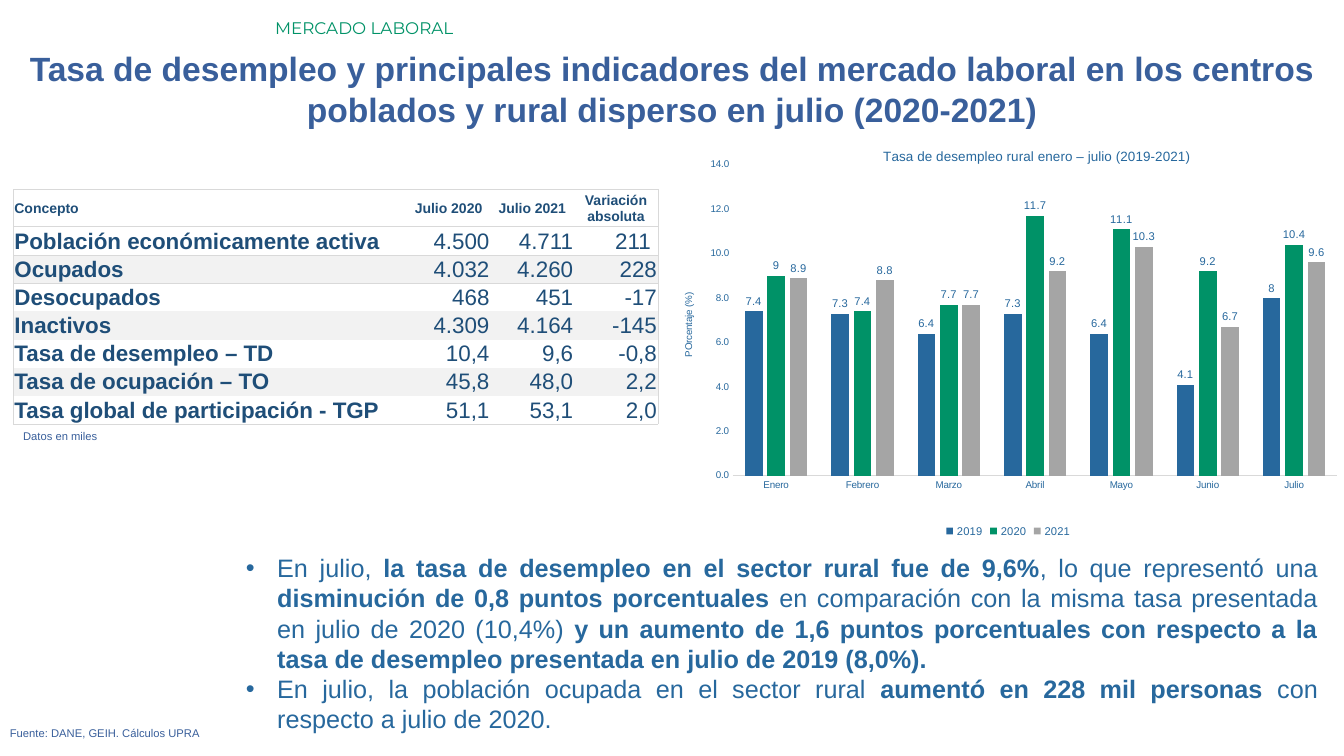
from lxml.etree import SubElement
from pptx import Presentation
from pptx.chart.data import CategoryChartData
from pptx.dml.color import RGBColor
from pptx.enum.chart import XL_CHART_TYPE as ChartType, XL_LABEL_POSITION as LabelPosition
from pptx.enum.chart import XL_LEGEND_POSITION as LegendPosition, XL_TICK_MARK as TickMark
from pptx.enum.text import MSO_ANCHOR as Anchor, MSO_AUTO_SIZE as AutoSize, PP_ALIGN as Align
from pptx.oxml import parse_xml
from pptx.oxml.ns import nsdecls, qn
from pptx.util import Inches, Pt

COLORS = {
    "blue": "27689D", "green": "009267", "gray": "A5A5A5", "heading": "395F9B",
    "navy": "1F4E78", "border": "D9D9D9", "band": "F2F2F2", "white": "FFFFFF",
}

deck = Presentation()
deck.slide_width, deck.slide_height = Inches(13.33), Inches(7.5)
COL, ROW = deck.slide_width / 100, deck.slide_height / 100
page = deck.slides.add_slide(deck.slide_layouts[1])


def area(left, top, width, height):
    return [round(n) for n in (left * COL, top * ROW, width * COL, height * ROW)]


def style(font, size, color, bold=None, name="Arial"):
    font.name, font.size, font.bold = name, Pt(size), bold
    font.color.rgb = RGBColor.from_string(COLORS[color])


title, body = page.shapes.title, page.placeholders[1]
for box, place in ((title, (0, 5.73, 100, 12.13)), (body, (17.55, 72.4, 81.25, 25.6))):
    box.left, box.top, box.width, box.height = area(*place)
    box.text_frame.auto_size = AutoSize.NONE
    box.text_frame.vertical_anchor = Anchor.TOP

title.text_frame.text = (
    "Tasa de desempleo y principales indicadores del mercado laboral "
    "en los centros poblados y rural disperso en julio (2020-2021)"
)
heading = title.text_frame.paragraphs[0]
heading.alignment = Align.CENTER
style(heading.font, 24, "heading", True)

findings = [
    [("En julio, ", False),
     ("la tasa de desempleo en el sector rural fue de 9,6%", True),
     (", lo que representó una ", False),
     ("disminución de 0,8 puntos porcentuales", True),
     (" en comparación con la misma tasa presentada en julio de 2020 (10,4%) ", False),
     ("y un aumento de 1,6 puntos porcentuales con respecto a la tasa de desempleo "
      "presentada en julio de 2019 (8,0%).", True)],
    [("En julio, la población ocupada en el sector rural ", False),
     ("aumentó en 228 mil personas ", True),
     ("con respecto a julio de 2020.", False)],
]
for index, finding in enumerate(findings):
    para = body.text_frame.add_paragraph() if index else body.text_frame.paragraphs[0]
    para.alignment, para.space_before = Align.JUSTIFY, Pt(0)
    properties = para._p.get_or_add_pPr()
    properties.set("marL", str(Inches(0.31)))
    properties.set("indent", str(-Inches(0.31)))
    SubElement(properties, qn("a:buFont")).set("typeface", "Arial")
    SubElement(properties, qn("a:buChar")).set("char", "•")
    style(para.font, 18, "blue")
    for text, bold in finding:
        span = para.add_run()
        span.text, span.font.bold = text, bold

notes = [
    ("MERCADO LABORAL", (19.73, 1.73, 80.27, 4), Align.LEFT, 12, "green", "Montserrat"),
    ("Fuente: DANE, GEIH. Cálculos UPRA", (0, 95.47, 96.85, 3.2), Align.JUSTIFY, 8, "heading", "Arial"),
    ("Datos en miles", (0.98, 56.13, 46.89, 3.2), Align.JUSTIFY, 8, "heading", "Arial"),
]
for text, place, alignment, size, color, font_name in notes:
    frame = page.shapes.add_textbox(*area(*place)).text_frame
    frame.word_wrap, frame.text = True, text
    para = frame.paragraphs[0]
    para.alignment = alignment
    style(para.font, size, color, name=font_name)

indicators = [
    ("Concepto", "Julio 2020", "Julio 2021", "Variación absoluta"),
    ("Población económicamente activa", "4.500", "4.711", "211"),
    ("Ocupados", "4.032", "4.260", "228"),
    ("Desocupados", "468", "451", "-17"),
    ("Inactivos", "4.309", "4.164", "-145"),
    ("Tasa de desempleo – TD", "10,4", "9,6", "-0,8"),
    ("Tasa de ocupación – TO", "45,8", "48,0", "2,2"),
    ("Tasa global de participación - TGP", "51,1", "53,1", "2,0"),
]
last_row, last_column = len(indicators) - 1, len(indicators[0]) - 1
table = page.shapes.add_table(last_row + 1, last_column + 1, *area(1, 25.07, 47.95, 31.04)).table
table.first_row = table.horz_banding = False
table._tbl.tblPr.find(qn("a:tableStyleId")).text = "{2D5ABB26-0587-4C30-8999-92F81FD0307C}"
for index, column in enumerate(table.columns):
    column.width = round((6.23 if index else 29.26) * COL)
for r, values in enumerate(indicators):
    table.rows[r].height = round((3.73 if r else 4.93) * ROW)
    for c, value in enumerate(values):
        cell = table.cell(r, c)
        cell.text, cell.vertical_anchor = value, Anchor.MIDDLE
        cell.margin_left = cell.margin_right = cell.margin_top = Inches(0.01)
        cell.margin_bottom = 0
        para = cell.text_frame.paragraphs[0]
        para.alignment = Align.LEFT if c == 0 else Align.RIGHT if r else Align.CENTER
        style(para.font, 16 if r else 10, "navy", r == 0 or c == 0)
        edges = {"lnL": c == 0, "lnR": c == last_column, "lnT": r <= 2, "lnB": r in (0, 1, last_row)}
        for edge, shown in edges.items():
            if shown:
                cell._tc.get_or_add_tcPr().append(parse_xml(
                    f'<a:{edge} {nsdecls("a")} w="{Pt(0.5)}"><a:solidFill>'
                    f'<a:srgbClr val="{COLORS["border"]}"/></a:solidFill></a:{edge}>'))
        cell.fill.solid()
        banded = r > 0 and r % 2 == 0
        cell.fill.fore_color.rgb = RGBColor.from_string(COLORS["band" if banded else "white"])
table.cell(1, last_column).margin_right = Inches(0.07)

rates = CategoryChartData()
rates.categories = ["Enero", "Febrero", "Marzo", "Abril", "Mayo", "Junio", "Julio"]
rates.add_series("2019", (7.4, 7.3, 6.4, 7.3, 6.4, 4.1, 8))
rates.add_series("2020", (9, 7.4, 7.7, 11.7, 11.1, 9.2, 10.4))
rates.add_series("2021", (8.9, 8.8, 7.7, 9.2, 10.3, 6.7, 9.6))
chart = page.shapes.add_chart(
    ChartType.COLUMN_CLUSTERED, *area(50.04, 17.47, 49.96, 54.13), rates).chart
style(chart.font, 8, "blue")

chart.has_title = True
chart.chart_title.text_frame.text = "Tasa de desempleo rural enero – julio (2019-2021)"
style(chart.chart_title.text_frame.paragraphs[0].font, 9.6, "blue", False)
chart.has_legend = True
chart.legend.position, chart.legend.include_in_layout = LegendPosition.BOTTOM, False
style(chart.legend.font, 8, "blue")

plot = chart.plots[0]
plot.gap_width, plot.overlap, plot.vary_by_categories = 136, -27, False
for series, color in zip(plot.series, ("blue", "green", "gray")):
    series.format.fill.solid()
    series.format.fill.fore_color.rgb = RGBColor.from_string(COLORS[color])
    labels = series.data_labels
    labels.show_value, labels.position = True, LabelPosition.OUTSIDE_END
    style(labels.font, 8, "blue")

months, percent = chart.category_axis, chart.value_axis
for axis in (months, percent):
    axis.major_tick_mark = axis.minor_tick_mark = TickMark.NONE
    axis.has_major_gridlines = False
    style(axis.tick_labels.font, 7, "blue")
months.format.line.width = Pt(0.75)
months.format.line.color.rgb = RGBColor.from_string(COLORS["border"])
percent.format.line.fill.background()
percent.minimum_scale, percent.maximum_scale, percent.major_unit = 0, 14, 2
percent.tick_labels.number_format = "#,##0.0"
percent.tick_labels.number_format_is_linked = False
percent.axis_title.text_frame.text = "POrcentaje (%)"
style(percent.axis_title.text_frame.paragraphs[0].font, 7, "blue", False)

layouts = [
    (chart.chart_title._element, {"xMode": "edge", "yMode": "edge", "x": 0.31, "y": 0.03}),
    (chart._chartSpace.chart.plotArea,
     {"layoutTarget": "inner", "xMode": "edge", "yMode": "edge", "x": 0.09, "y": 0.08, "w": 0.9, "h": 0.76}),
]
for element, settings in layouts:
    for old in element.findall(qn("c:layout")):
        element.remove(old)
    entries = "".join(f'<c:{key} val="{value}"/>' for key, value in settings.items())
    layout = parse_xml(
        f'<c:layout {nsdecls("c")}><c:manualLayout>{entries}</c:manualLayout></c:layout>')
    text = element.find(qn("c:tx"))
    element.insert(0 if text is None else 1, layout)

deck.save("out.pptx")
